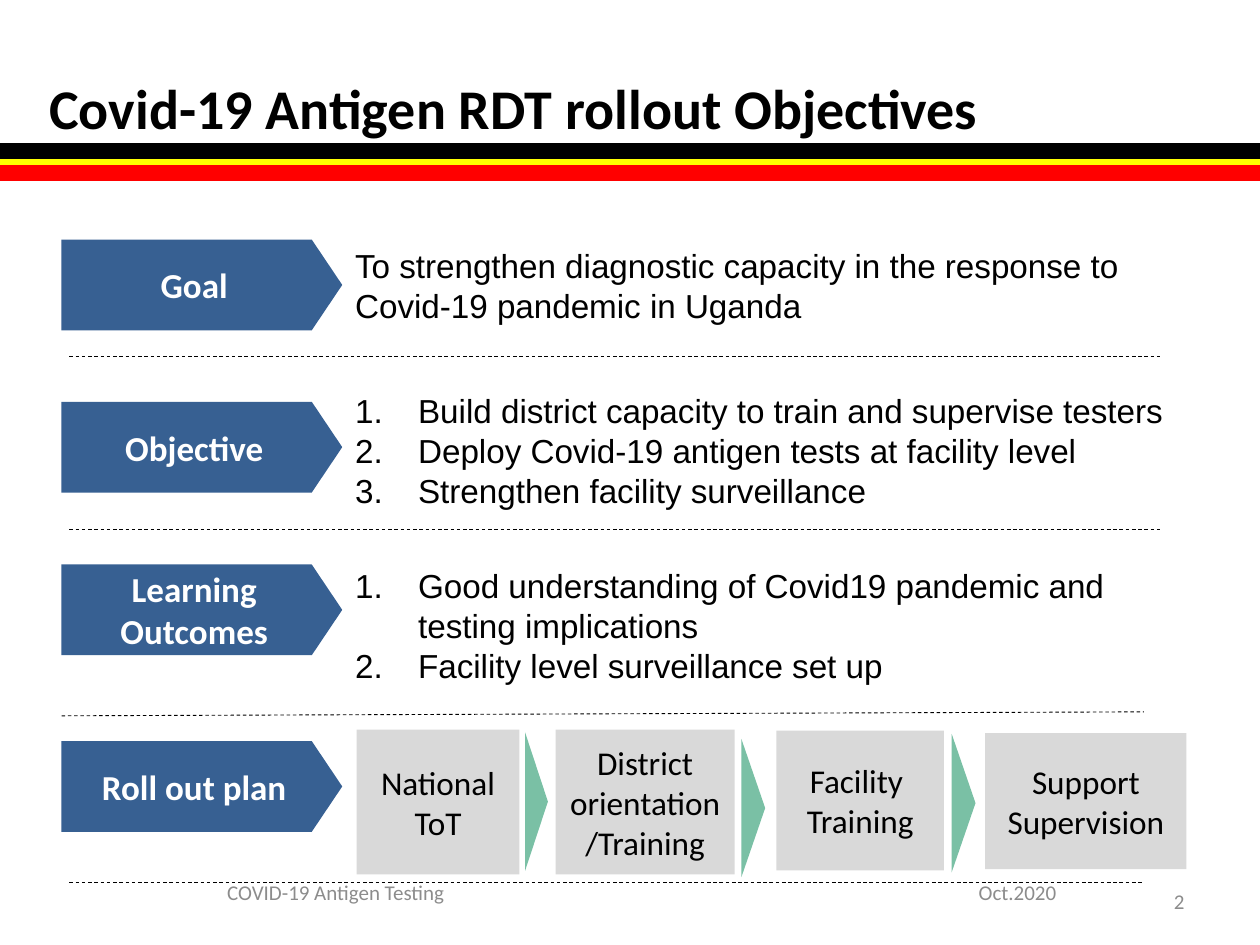
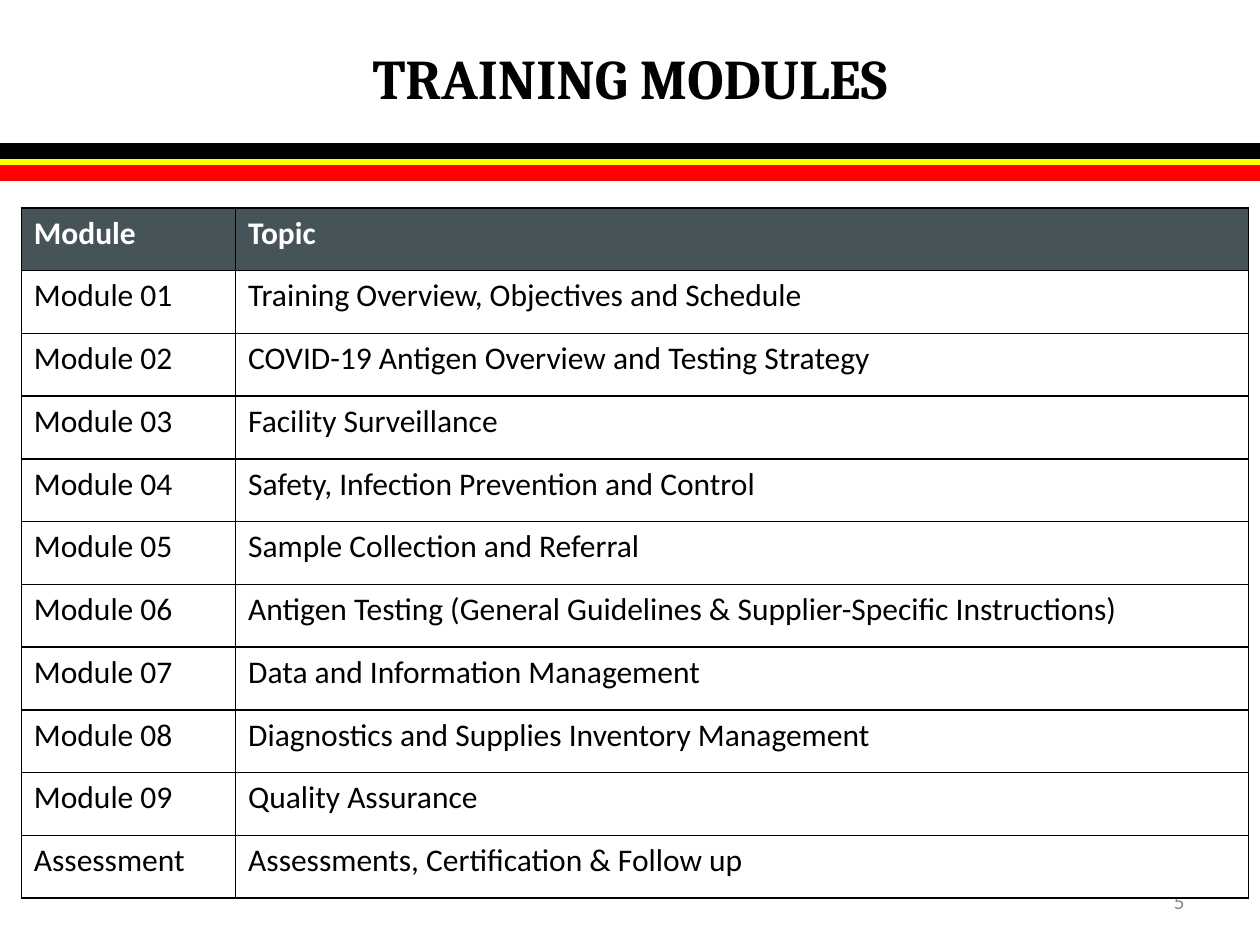
from dataclasses import dataclass

from lxml.etree import SubElement
from pptx import Presentation
from pptx.dml.color import RGBColor
from pptx.enum.dml import MSO_LINE
from pptx.enum.shapes import MSO_CONNECTOR, MSO_SHAPE
from pptx.enum.text import MSO_ANCHOR as Anchor, PP_ALIGN as Align
from pptx.oxml.ns import qn
from pptx.util import Cm, Pt

BLACK = RGBColor(0x00, 0x00, 0x00)
WHITE = RGBColor(0xFF, 0xFF, 0xFF)
YELLOW = RGBColor(0xFF, 0xFF, 0x00)
RED = RGBColor(0xFF, 0x00, 0x00)
BLUE = RGBColor(0x37, 0x60, 0x92)
GREEN = RGBColor(0x7A, 0xC0, 0xA5)
STEP_GREY = RGBColor(0xD9, 0xD9, 0xD9)
FOOTER_GREY = RGBColor(0x8C, 0x8C, 0x8C)
HEADER_SLATE = RGBColor(0x46, 0x53, 0x59)


@dataclass(frozen=True)
class Box:
    """Position and size in centimetres."""
    left: float
    top: float
    width: float
    height: float

    def lengths(self) -> tuple:
        return Cm(self.left), Cm(self.top), Cm(self.width), Cm(self.height)


@dataclass(frozen=True)
class TextStyle:
    size: float
    font: str = "Calibri"
    color: RGBColor = BLACK
    bold: bool = False
    align: Align = Align.LEFT


@dataclass(frozen=True)
class Rule:
    """Straight line from start to end, in centimetres."""
    left: float
    top: float
    right: float
    bottom: float
    color: RGBColor = BLACK
    weight: float = 0.5
    dashed: bool = True


@dataclass(frozen=True)
class Section:
    label: str
    label_top: float
    body: str = ""
    body_box: Box | None = None
    numbered: bool = True


@dataclass(frozen=True)
class Step:
    text: str
    box: Box


LABEL_STYLE = TextStyle(20, color=WHITE, bold=True, align=Align.CENTER)
BODY_STYLE = TextStyle(19, font="Arial")
STEP_STYLE = TextStyle(19, align=Align.CENTER)
HEADER_STYLE = TextStyle(18, color=WHITE, bold=True)
CELL_STYLE = TextStyle(18)

# Flag bands under every title
BANDS = [
    Rule(-0.08, top, 25.4, top, color, 9, False)
    for top, color in ((3.28, YELLOW), (3.48, RED), (3.05, BLACK))
]

SECTIONS = [
    Section("Goal", 4.83,
            "To strengthen diagnostic capacity in the response to Covid-19 pandemic in Uganda",
            Box(6.91, 4.83, 16.89, 1.88), numbered=False),
    Section("Objective", 8.1,
            "Build district capacity to train and supervise testers\n"
            "Deploy Covid-19 antigen tests at facility level\n"
            "Strengthen facility surveillance",
            Box(6.91, 7.75, 18.24, 2.69)),
    Section("Learning Outcomes", 11.38,
            "Good understanding of Covid19 pandemic and testing implications\n"
            "Facility level surveillance set up",
            Box(6.91, 11.28, 17.65, 2.69)),
    Section("Roll out plan", 14.94),
]

DIVIDERS = [
    Rule(1.4, 7.19, 23.39, 7.19),
    Rule(1.4, 10.67, 23.39, 10.67),
    Rule(1.24, 14.43, 23.06, 14.35),
    Rule(1.4, 17.78, 23.06, 17.78),
]

STEPS = [
    Step("National ToT", Box(7.19, 14.71, 3.28, 2.92)),
    Step("District orientation/Training", Box(11.2, 14.71, 3.61, 2.92)),
    Step("Facility \nTraining", Box(15.65, 14.73, 3.38, 2.82)),
    Step("Support Supervision", Box(19.86, 14.78, 4.06, 2.74)),
]

# Boxes of the step arrows before their quarter turn
STEP_ARROWS = [
    Box(9.42, 15.93, 2.79, 0.46),
    Box(13.79, 16.05, 2.79, 0.48),
    Box(18.03, 15.95, 2.79, 0.48),
]

TOPICS = [
    "Training Overview, Objectives and Schedule",
    "COVID-19 Antigen Overview and Testing Strategy",
    "Facility Surveillance",
    "Safety, Infection Prevention and Control",
    "Sample Collection and Referral",
    "Antigen Testing (General Guidelines & Supplier-Specific Instructions)",
    "Data and Information Management",
    "Diagnostics and Supplies Inventory Management",
    "Quality Assurance",
]
MODULE_ROWS = [
    ("Module", "Topic"),
    *((f"Module {number:02}", topic) for number, topic in enumerate(TOPICS, 1)),
    ("Assessment", "Assessments, Certification & Follow up"),
]


def write_text(text_frame, text: str, style: TextStyle) -> None:
    text_frame.text = text
    for paragraph in text_frame.paragraphs:
        paragraph.alignment = style.align
        for run in paragraph.runs:
            run.font.size = Pt(style.size)
            run.font.name = style.font
            run.font.bold = style.bold
            run.font.color.rgb = style.color


def add_text(slide, box: Box, text: str, style: TextStyle, anchor: Anchor = Anchor.TOP):
    text_frame = slide.shapes.add_textbox(*box.lengths()).text_frame
    text_frame.word_wrap = True
    text_frame.vertical_anchor = anchor
    write_text(text_frame, text, style)
    return text_frame


def add_filled_shape(slide, kind: MSO_SHAPE, box: Box, color: RGBColor):
    shape = slide.shapes.add_shape(kind, *box.lengths())
    shape.shadow.inherit = False
    shape.fill.solid()
    shape.fill.fore_color.rgb = color
    shape.line.fill.background()
    return shape


def write_label(shape, text: str, style: TextStyle, side: float, end: float) -> None:
    text_frame = shape.text_frame
    text_frame.word_wrap = True
    text_frame.vertical_anchor = Anchor.MIDDLE
    text_frame.margin_left = text_frame.margin_right = Cm(side)
    text_frame.margin_top = text_frame.margin_bottom = Cm(end)
    write_text(text_frame, text, style)


def add_rule(slide, rule: Rule) -> None:
    connector = slide.shapes.add_connector(
        MSO_CONNECTOR.STRAIGHT,
        Cm(rule.left), Cm(rule.top), Cm(rule.right), Cm(rule.bottom))
    connector.line.color.rgb = rule.color
    connector.line.width = Pt(rule.weight)
    if rule.dashed:
        connector.line.dash_style = MSO_LINE.DASH
    SubElement(connector._element.spPr, qn("a:effectLst"))


def number_paragraphs(text_frame) -> None:
    for paragraph in text_frame.paragraphs:
        properties = paragraph._p.get_or_add_pPr()
        properties.set("marL", str(Cm(1.27)))
        properties.set("indent", str(-Cm(1.27)))
        SubElement(properties, qn("a:buFont"), typeface="+mj-lt")
        SubElement(properties, qn("a:buAutoNum"), type="arabicPeriod")


def add_section(slide, section: Section) -> None:
    pentagon = add_filled_shape(
        slide, MSO_SHAPE.PENTAGON, Box(1.24, section.label_top, 5.66, 1.83), BLUE)
    pentagon.adjustments[0] = 0.336
    write_label(pentagon, section.label, LABEL_STYLE, side=0.25, end=0.38)
    if section.body_box:
        text_frame = add_text(slide, section.body_box, section.body, BODY_STYLE)
        if section.numbered:
            number_paragraphs(text_frame)


def add_step(slide, step: Step) -> None:
    rectangle = add_filled_shape(slide, MSO_SHAPE.RECTANGLE, step.box, STEP_GREY)
    write_label(rectangle, step.text, STEP_STYLE, side=0.28, end=0.13)


def add_footer(slide, box: Box, text: str, align: Align) -> None:
    style = TextStyle(12, color=FOOTER_GREY, align=align)
    add_text(slide, box, text, style, Anchor.MIDDLE)


def set_cell_borders(cell) -> None:
    properties = cell._tc.get_or_add_tcPr()
    for side in ("lnL", "lnR", "lnT", "lnB"):
        line = SubElement(properties, qn(f"a:{side}"), w=str(Pt(1)))
        fill = SubElement(line, qn("a:solidFill"))
        SubElement(fill, qn("a:srgbClr"), val=str(BLACK))


def add_module_table(slide) -> None:
    box = Box(0.43, 4.19, 24.74, 13.92)
    table = slide.shapes.add_table(len(MODULE_ROWS), 2, *box.lengths()).table
    for column, width in zip(table.columns, (4.32, 20.42)):
        column.width = Cm(width)
    for row_index, texts in enumerate(MODULE_ROWS):
        is_header = row_index == 0
        for column_index, text in enumerate(texts):
            cell = table.cell(row_index, column_index)
            set_cell_borders(cell)
            cell.fill.solid()
            cell.fill.fore_color.rgb = HEADER_SLATE if is_header else WHITE
            write_text(cell.text_frame, text, HEADER_STYLE if is_header else CELL_STYLE)


def add_titled_slide(presentation, title: str, top: float, style: TextStyle, number: int):
    slide = presentation.slides.add_slide(presentation.slide_layouts[5])
    for band in BANDS:
        add_rule(slide, band)
    placeholder = slide.shapes.title
    placeholder.left, placeholder.top, placeholder.width, placeholder.height = (
        Box(0.74, top, 23.93, 2.34).lengths())
    placeholder.text_frame.vertical_anchor = Anchor.MIDDLE
    write_text(placeholder.text_frame, title, style)
    add_footer(slide, Box(18.21, 17.65, 5.92, 1.02), str(number), Align.RIGHT)
    return slide


def build_objectives(presentation) -> None:
    slide = add_titled_slide(presentation, "Covid-19 Antigen RDT rollout Objectives",
                             0.99, TextStyle(32, bold=True), 2)
    add_footer(slide, Box(19.48, 17.48, 5.92, 1.02), "Oct.2020", Align.LEFT)
    add_footer(slide, Box(0, 17.48, 13.54, 1.02), "COVID-19 Antigen Testing", Align.CENTER)
    for section in SECTIONS:
        add_section(slide, section)
    for divider in DIVIDERS:
        add_rule(slide, divider)
    # Roll out steps and the arrows between them
    for step in STEPS:
        add_step(slide, step)
    for box in STEP_ARROWS:
        arrow = add_filled_shape(slide, MSO_SHAPE.ISOSCELES_TRIANGLE, box, GREEN)
        arrow.rotation = 90


def build_modules(presentation) -> None:
    style = TextStyle(32, font="Cambria", bold=True, align=Align.CENTER)
    slide = add_titled_slide(presentation, "TRAINING MODULES", 0.38, style, 5)
    add_module_table(slide)


def main() -> None:
    presentation = Presentation()
    presentation.slide_width, presentation.slide_height = Cm(25.4), Cm(19.05)
    build_objectives(presentation)
    build_modules(presentation)
    presentation.save("out.pptx")


if __name__ == "__main__":
    main()
